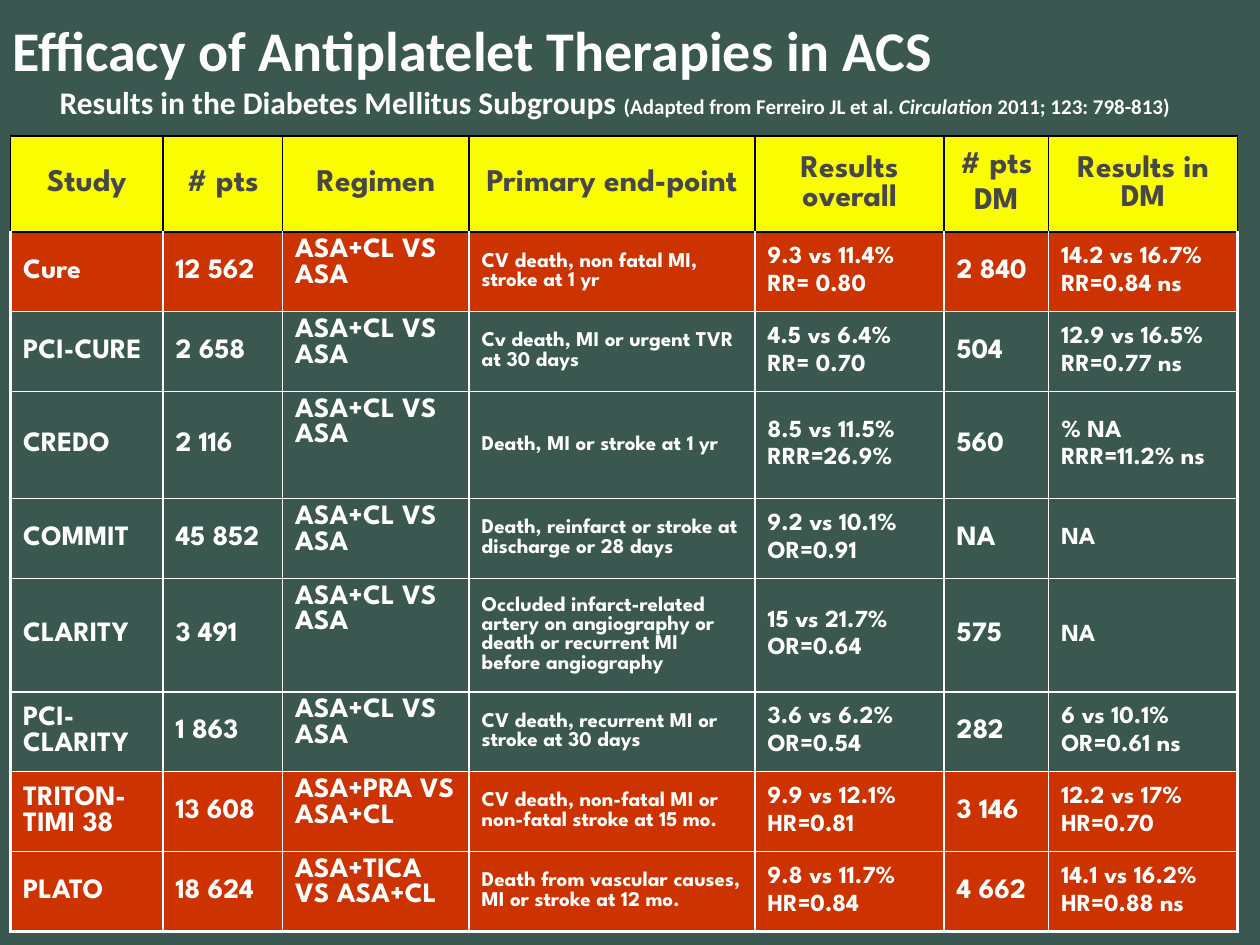
from lxml.etree import SubElement
from pptx import Presentation
from pptx.dml.color import RGBColor
from pptx.enum.text import MSO_ANCHOR, PP_ALIGN
from pptx.oxml.ns import qn
from pptx.util import Pt

BACKGROUND, WHITE, BLACK = "3A5750", "FFFFFF", "000000"
YELLOW, RED, GREY = "FAFD00", "CC3300", "474747"
TITLE_FONT, TABLE_FONT = "Calibri", "League Spartan"
THIN, THICK = 1, 2.25

COLUMN_WIDTHS = [87.1, 68.4, 106.6, 163.4, 108, 59.8, 108]
COLUMN_SIZES = [16, 16, 16, 12, 14, 16, 14]
ROW_HEIGHTS = [54.7, 45.5, 45.5, 61.2, 45.5, 64.8, 45.5, 45.5, 45.5]
REGIMEN_COLUMN = 2
HIGHLIGHTED = {"Cure", "TRITON-TIMI 38", "PLATO"}

# A line feed starts a new paragraph in the cell
HEADER = ["Study", "# pts", "Regimen", "Primary end-point", "Results overall",
          "# pts\nDM", "Results in DM"]
STUDIES = [
    ["Cure", "12 562", "ASA+CL VS ASA", "CV death, non fatal MI, stroke at 1 yr",
     "9.3 vs 11.4%\nRR= 0.80", "2 840", "14.2 vs 16.7%\nRR=0.84 ns"],
    ["PCI-CURE", "2 658", "ASA+CL VS ASA", "Cv death, MI or urgent TVR at 30 days",
     "4.5 vs 6.4%\nRR= 0.70", "504", "12.9 vs 16.5%\nRR=0.77 ns"],
    ["CREDO", "2 116", "ASA+CL VS ASA", "Death, MI or stroke at 1 yr",
     "8.5 vs 11.5%\nRRR=26.9%", "560", "% NA\nRRR=11.2% ns"],
    ["COMMIT", "45 852", "ASA+CL VS ASA",
     "Death, reinfarct or stroke at discharge or 28 days",
     "9.2 vs 10.1%\nOR=0.91", "NA", "NA"],
    ["CLARITY", "3 491", "ASA+CL VS ASA",
     "Occluded infarct-related artery on angiography or death or recurrent MI "
     "before angiography",
     "15 vs 21.7%\nOR=0.64", "575", "NA"],
    ["PCI-CLARITY", "1 863", "ASA+CL VS ASA",
     "CV death, recurrent MI or stroke at 30 days",
     "3.6 vs 6.2%\nOR=0.54", "282", "6 vs 10.1%\nOR=0.61 ns"],
    ["TRITON-TIMI 38", "13 608", "ASA+PRA VS ASA+CL",
     "CV death, non-fatal MI or non-fatal stroke at 15 mo.",
     "9.9 vs 12.1%\nHR=0.81", "3 146", "12.2 vs 17%\nHR=0.70"],
    ["PLATO", "18 624", "ASA+TICA VS ASA+CL",
     "Death from vascular causes, MI or stroke at 12 mo.",
     "9.8 vs 11.7%\nHR=0.84", "4 662", "14.1 vs 16.2%\nHR=0.88 ns"],
]


def color(value):
    return RGBColor.from_string(value)


def add_text(para, text, size, font=TABLE_FONT, fill=WHITE, italic=False):
    span = para.add_run()
    span.text = text
    span.font.name = font
    span.font.size = Pt(size)
    span.font.bold = True
    span.font.italic = italic
    span.font.color.rgb = color(fill)


def set_borders(cell, **sides):
    """Draw each side (L, R, T, B) from its (colour, width) pair."""
    properties = cell._tc.get_or_add_tcPr()
    for side in "LRTB":
        line_color, width = sides[side]
        line = SubElement(properties, qn(f"a:ln{side}"), w=str(int(Pt(width))))
        solid = SubElement(line, qn("a:solidFill"))
        SubElement(solid, qn("a:srgbClr"), val=line_color)


def fill_cell(cell, text, size, fill=None, text_color=WHITE,
              align=PP_ALIGN.LEFT, anchor=MSO_ANCHOR.MIDDLE):
    if fill:
        cell.fill.solid()
        cell.fill.fore_color.rgb = color(fill)
    else:
        cell.fill.background()
    cell.vertical_anchor = anchor
    frame = cell.text_frame
    for index, line in enumerate(text.split("\n")):
        para = frame.add_paragraph() if index else frame.paragraphs[0]
        para.alignment = align
        para.space_before = Pt(round(0.2 * size, 1))
        add_text(para, line, size, fill=text_color)


def add_title(page, left, top, width, height):
    box = page.shapes.add_textbox(Pt(left), Pt(top), Pt(width), Pt(height))
    frame = box.text_frame
    frame.word_wrap = True
    frame.vertical_anchor = MSO_ANCHOR.MIDDLE
    para = frame.paragraphs[0]
    # Hanging indent sets the subtitle line in from the title
    indent = int(Pt(27))
    properties = para._p.get_or_add_pPr()
    properties.set("marL", str(indent))
    properties.set("indent", str(-indent))
    add_text(para, "Efficacy of Antiplatelet Therapies in ACS", 32, TITLE_FONT)
    para.add_line_break()
    add_text(para, "Results in the Diabetes Mellitus Subgroups ", 18, TITLE_FONT)
    add_text(para, "(Adapted from Ferreiro JL et al. ", 12, TITLE_FONT)
    add_text(para, "Circulation", 12, TITLE_FONT, italic=True)
    add_text(para, " 2011; 123: 798-813)", 12, TITLE_FONT)


def add_study_table(page, left, top, width, height):
    table = page.shapes.add_table(len(ROW_HEIGHTS), len(COLUMN_WIDTHS), Pt(left),
                                  Pt(top), Pt(width), Pt(height)).table
    table.first_row = table.horz_banding = False
    for column, column_width in zip(table.columns, COLUMN_WIDTHS):
        column.width = Pt(column_width)
    for row, row_height in zip(table.rows, ROW_HEIGHTS):
        row.height = Pt(row_height)

    # Header row
    black_line = (BLACK, THIN)
    for index, text in enumerate(HEADER):
        cell = table.cell(0, index)
        set_borders(cell, L=black_line, R=black_line, T=black_line, B=black_line)
        fill_cell(cell, text, 18, YELLOW, GREY, PP_ALIGN.CENTER)

    # Study rows, with a thick outer frame
    last_row, last_column = len(STUDIES), len(HEADER) - 1
    for row_index, study in enumerate(STUDIES, 1):
        fill = RED if study[0] in HIGHLIGHTED else None
        for index, (text, size) in enumerate(zip(study, COLUMN_SIZES)):
            cell = table.cell(row_index, index)
            set_borders(cell,
                        L=(WHITE, THICK if index == 0 else THIN),
                        R=(WHITE, THICK if index == last_column else THIN),
                        T=black_line if row_index == 1 else (WHITE, THIN),
                        B=(WHITE, THICK if row_index == last_row else THIN))
            anchor = MSO_ANCHOR.TOP if index == REGIMEN_COLUMN else MSO_ANCHOR.MIDDLE
            fill_cell(cell, text, size, fill, anchor=anchor)


def main():
    deck = Presentation()
    deck.slide_width, deck.slide_height = Pt(720), Pt(540)
    page = deck.slides.add_slide(deck.slide_layouts[6])
    page.background.fill.solid()
    page.background.fill.fore_color.rgb = color(BACKGROUND)
    add_title(page, 0, 0, 720, 77.8)
    add_study_table(page, 6, 77.8, sum(COLUMN_WIDTHS), sum(ROW_HEIGHTS))
    deck.save("out.pptx")


if __name__ == "__main__":
    main()
